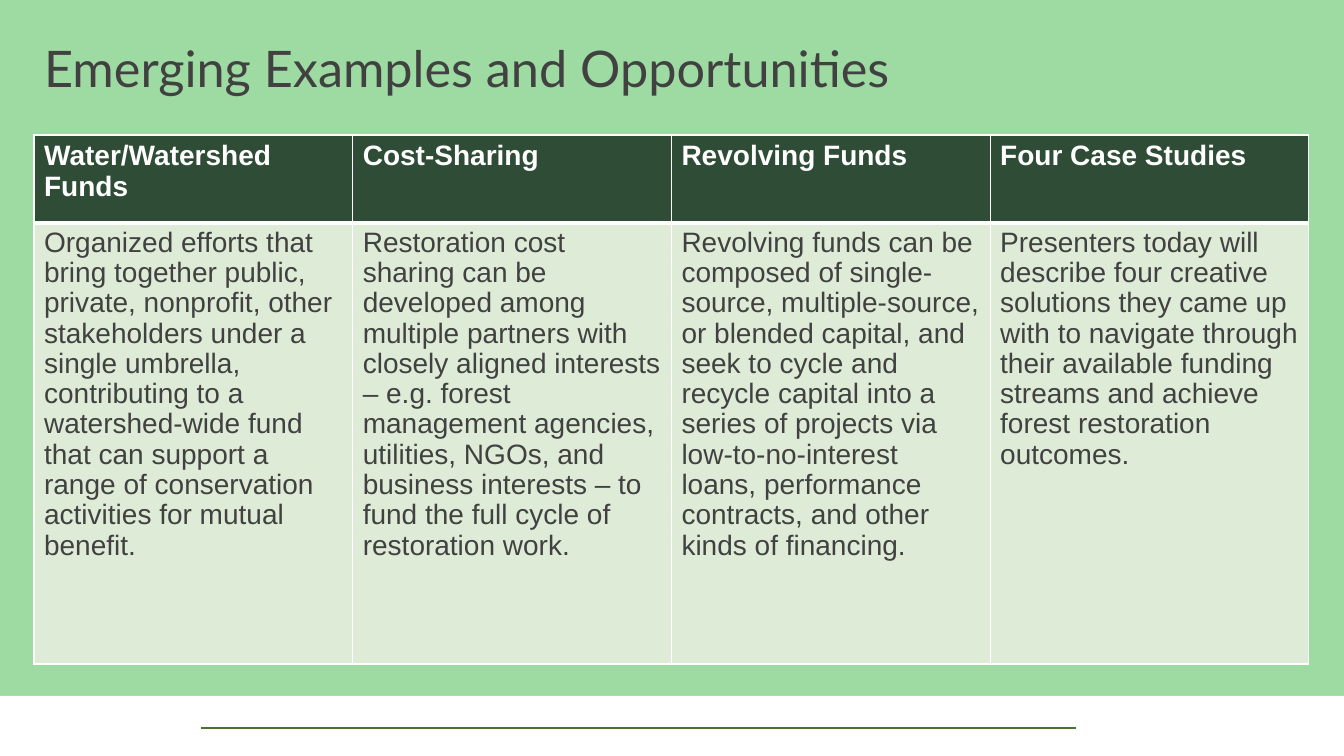
from lxml.etree import SubElement
from pptx import Presentation
from pptx.dml.color import RGBColor
from pptx.enum.shapes import MSO_CONNECTOR, MSO_SHAPE
from pptx.enum.text import MSO_ANCHOR, PP_ALIGN
from pptx.oxml.ns import qn
from pptx.util import Emu, Pt

SLIDE_W, SLIDE_H = 1344, 756
EMU_PER_PX = 914400 / 100.8

GREEN = RGBColor(0x75, 0xCC, 0x7B)
DARK_GREEN = RGBColor(0x2E, 0x4C, 0x36)
PALE_GREEN = RGBColor(0xDE, 0xEB, 0xD7)
RULE_GREEN = RGBColor(0x4C, 0x71, 0x31)
GREY = RGBColor(0x41, 0x41, 0x41)
WHITE = RGBColor(0xFF, 0xFF, 0xFF)

TITLE = "Emerging Examples and Opportunities"
COLUMNS = [
    ("Water/Watershed Funds",
     "Organized efforts that bring together public, private, nonprofit, other "
     "stakeholders under a single umbrella, contributing to a watershed-wide fund "
     "that can support a range of conservation activities for mutual benefit."),
    ("Cost-Sharing",
     "Restoration cost sharing can be developed among multiple partners with "
     "closely aligned interests – e.g. forest management agencies, utilities, "
     "NGOs, and business interests – to fund the full cycle of restoration work."),
    ("Revolving Funds",
     "Revolving funds can be composed of single-source, multiple-source, or "
     "blended capital, and seek to cycle and recycle capital into a series of "
     "projects via low-to-no-interest loans, performance contracts, and other "
     "kinds of financing."),
    ("Four Case Studies",
     "Presenters today will describe four creative solutions they came up with to "
     "navigate through their available funding streams and achieve forest "
     "restoration outcomes."),
]


def px(n):
    return Emu(round(n * EMU_PER_PX))


def write(tf, text, size=20, font="Arial", color=GREY, bold=False, spacing=None):
    p = tf.paragraphs[0]
    p.alignment = PP_ALIGN.LEFT
    p.line_spacing = spacing
    r = p.add_run()
    r.text = text
    r.font.size, r.font.name, r.font.bold = Pt(size), font, bold
    r.font.color.rgb = color


def add_band(s, x, y, w, h, color, alpha=None):
    sp = s.shapes.add_shape(MSO_SHAPE.RECTANGLE, px(x), px(y), px(w), px(h))
    sp.shadow.inherit = False
    sp.fill.solid()
    sp.fill.fore_color.rgb = color
    sp.line.fill.background()
    if alpha:
        clr = sp._element.spPr.find(qn("a:solidFill"))[0]
        SubElement(clr, qn("a:alpha"), val=str(alpha * 1000))


def add_background(s, x, y, w, h):
    footer_h = 60
    footer_y = y + h - footer_h
    add_band(s, x, y, w, h, GREEN, alpha=70)
    add_band(s, x, footer_y, w, footer_h, WHITE)
    rule_y = px(footer_y + 32)
    rule = s.shapes.add_connector(MSO_CONNECTOR.STRAIGHT, px(x + 201), rule_y,
                                  px(x + 1076), rule_y)
    rule.line.color.rgb = RULE_GREEN
    rule.line.width = Pt(1)
    SubElement(rule._element.spPr, qn("a:effectLst"))


def add_title(s, x, y, w, h):
    title = s.shapes.title
    title.left, title.top, title.width, title.height = px(x), px(y), px(w), px(h)
    tf = title.text_frame
    tf.word_wrap = True
    tf.vertical_anchor = MSO_ANCHOR.MIDDLE
    write(tf, TITLE, size=36, font="Lato", spacing=0.9)
    s.shapes._spTree.append(title._element)  # bring in front of the background


def set_borders(cell, bottom):
    tcPr = cell._tc.get_or_add_tcPr()
    for side, width in (("L", 1), ("R", 1), ("T", 1), ("B", bottom)):
        ln = SubElement(tcPr, qn(f"a:ln{side}"), w=str(Pt(width)))
        fill = SubElement(ln, qn("a:solidFill"))
        SubElement(fill, qn("a:srgbClr"), val=str(WHITE))


def fill_cell(cell, text, fill, bottom, **fmt):
    set_borders(cell, bottom)
    cell.fill.solid()
    cell.fill.fore_color.rgb = fill
    write(cell.text_frame, text, **fmt)


def add_examples_table(s, x, y, w, h):
    header_h = 88
    table = s.shapes.add_table(2, len(COLUMNS), px(x), px(y), px(w), px(h)).table
    table.rows[0].height = px(header_h)
    table.rows[1].height = px(h - header_h)
    for i, (heading, body) in enumerate(COLUMNS):
        table.columns[i].width = px(w / len(COLUMNS))
        fill_cell(table.cell(0, i), heading, DARK_GREEN, 3, color=WHITE, bold=True)
        fill_cell(table.cell(1, i), body, PALE_GREEN, 1, spacing=0.97)


def main():
    prs = Presentation()
    prs.slide_width, prs.slide_height = px(SLIDE_W), px(SLIDE_H)
    s = prs.slides.add_slide(prs.slide_layouts[5])
    add_background(s, 0, 0, SLIDE_W, SLIDE_H)
    add_title(s, 34, 16, 1202, 110)
    add_examples_table(s, 34, 135, 1275, 529)
    prs.save("out.pptx")


if __name__ == "__main__":
    main()
